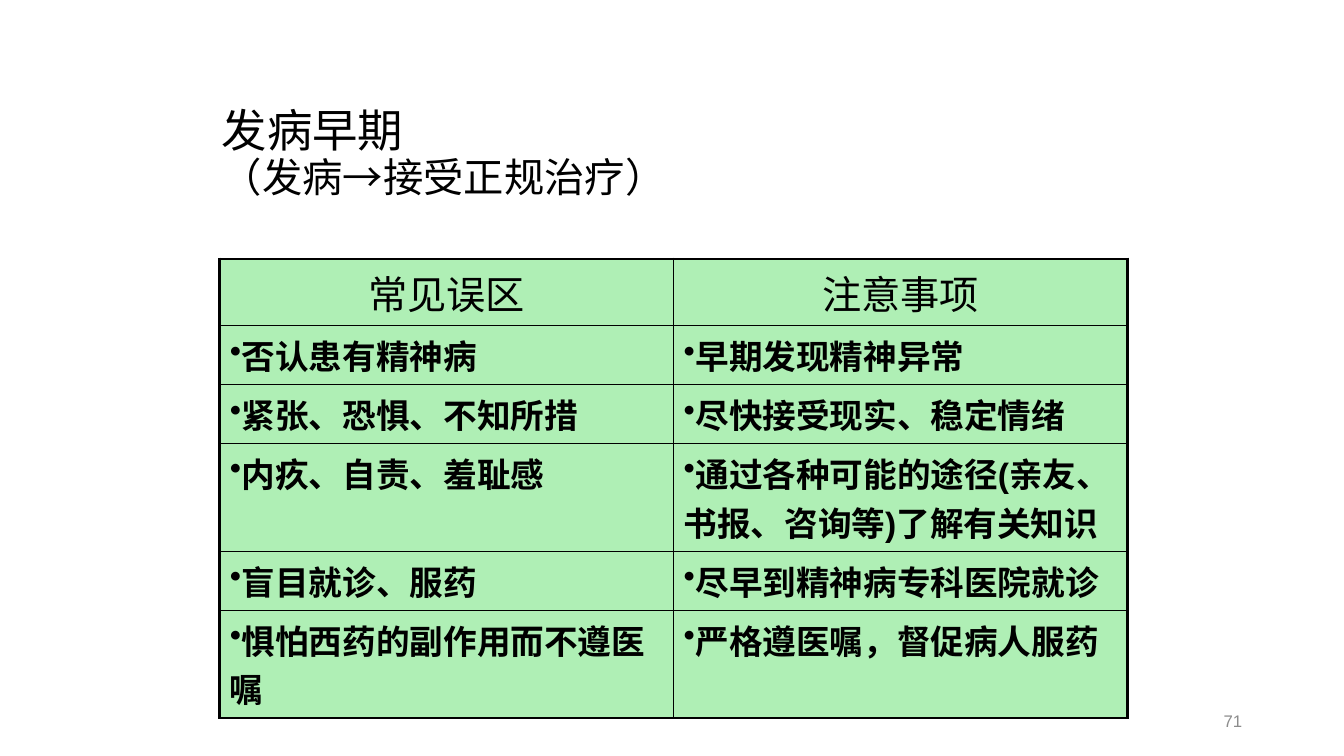
"""Build the slide on the early stage of illness: a title over a two-column table."""
from lxml import etree
from pptx import Presentation
from pptx.dml.color import RGBColor
from pptx.enum import text as t
from pptx.oxml import ns
from pptx.util import Inches, Pt

TITLE = [("发病早期", 32.4, "Calibri"), ("（发病", 28.8, "Calibri"),
         ("→", 28.8, "Noto Sans CJK SC"), ("接受正规治疗）", 28.8, "Calibri")]
ROWS = [
    ("常见误区", "注意事项"),
    ("否认患有精神病", "早期发现精神异常"),
    ("紧张、恐惧、不知所措", "尽快接受现实、稳定情绪"),
    ("内疚、自责、羞耻感", "通过各种可能的途径(亲友、书报、咨询等)了解有关知识"),
    ("盲目就诊、服药", "尽早到精神病专科医院就诊"),
    ("惧怕西药的副作用而不遵医嘱", "严格遵医嘱，督促病人服药"),
]
HEIGHTS = [0.65, 0.58, 0.58, 1.07, 0.58, 1.07]
WIDTH = 4.5
THICK, THIN = 2.25, 1


def style(font, size, name, color="000000", bold=False):
    font.size, font.name, font.bold = Pt(size), name, bold
    font.color.rgb = RGBColor.from_string(color)


def add(parent, tag, **attrs):
    return etree.SubElement(parent, ns.qn(tag), attrs)


def border(cell, widths):
    props = cell._tc.get_or_add_tcPr()
    for i, (side, width) in enumerate(widths.items()):
        line = etree.Element(ns.qn("a:ln" + side), w=str(Pt(width)))
        add(add(line, "a:solidFill"), "a:srgbClr", val="000000")
        props.insert(i, line)


def fill_cell(cell, words, head):
    cell.fill.solid()
    cell.fill.fore_color.rgb = RGBColor.from_string("AFEFB5")
    cell.text = words
    para = cell.text_frame.paragraphs[0]
    style(para.font, 28 if head else 24, "Arial", bold=not head)
    props = para._p.get_or_add_pPr()
    space = etree.Element(ns.qn("a:spcBef"))
    add(space, "a:spcPct", val="20000")
    props.insert(0, space)
    if head:
        para.alignment = t.PP_ALIGN.CENTER
    else:
        props.set("marL", "0")
        props.set("indent", "0")
        bullet = etree.Element(ns.qn("a:buChar"), char="•")
        props.insert(1, bullet)


def add_title(slide):
    title = slide.shapes.title
    title.left, title.top = Inches(2.1), Inches(0.91)
    title.width, title.height = Inches(9), Inches(1.25)
    frame = title.text_frame
    frame.vertical_anchor = t.MSO_ANCHOR.MIDDLE
    para = frame.paragraphs[0]
    para.alignment, para.line_spacing = t.PP_ALIGN.LEFT, 0.9
    for i, (words, size, name) in enumerate(TITLE):
        if i == 1:
            para.add_line_break()
        run = para.add_run()
        run.text = words
        style(run.font, size, name)


def add_grid(slide):
    last = len(ROWS) - 1
    grid = slide.shapes.add_table(len(ROWS), 2, Inches(2.18), Inches(2.57),
                                  Inches(2 * WIDTH), Inches(sum(HEIGHTS))).table
    for col in grid.columns:
        col.width = Inches(WIDTH)
    for r, (pair, height) in enumerate(zip(ROWS, HEIGHTS)):
        grid.rows[r].height = Inches(height)
        for c, words in enumerate(pair):
            cell = grid.cell(r, c)
            fill_cell(cell, words, r == 0)
            border(cell, {"L": THIN if c else THICK, "R": THICK if c else THIN,
                          "T": THIN if r else THICK, "B": THICK if r == last else THIN})


def add_number(slide):
    box = slide.shapes.add_textbox(Inches(9.42), Inches(6.95), Inches(3), Inches(0.4))
    frame = box.text_frame
    frame.word_wrap, frame.vertical_anchor = True, t.MSO_ANCHOR.MIDDLE
    para = frame.paragraphs[0]
    para.text, para.alignment = "71", t.PP_ALIGN.RIGHT
    style(para.font, 12, "Arial", "8C8C8C")


def main():
    deck = Presentation()
    deck.slide_width, deck.slide_height = Inches(13.33), Inches(7.5)
    slide = deck.slides.add_slide(deck.slide_layouts[5])
    add_title(slide)
    add_grid(slide)
    add_number(slide)
    deck.save("out.pptx")


if __name__ == "__main__":
    main()
